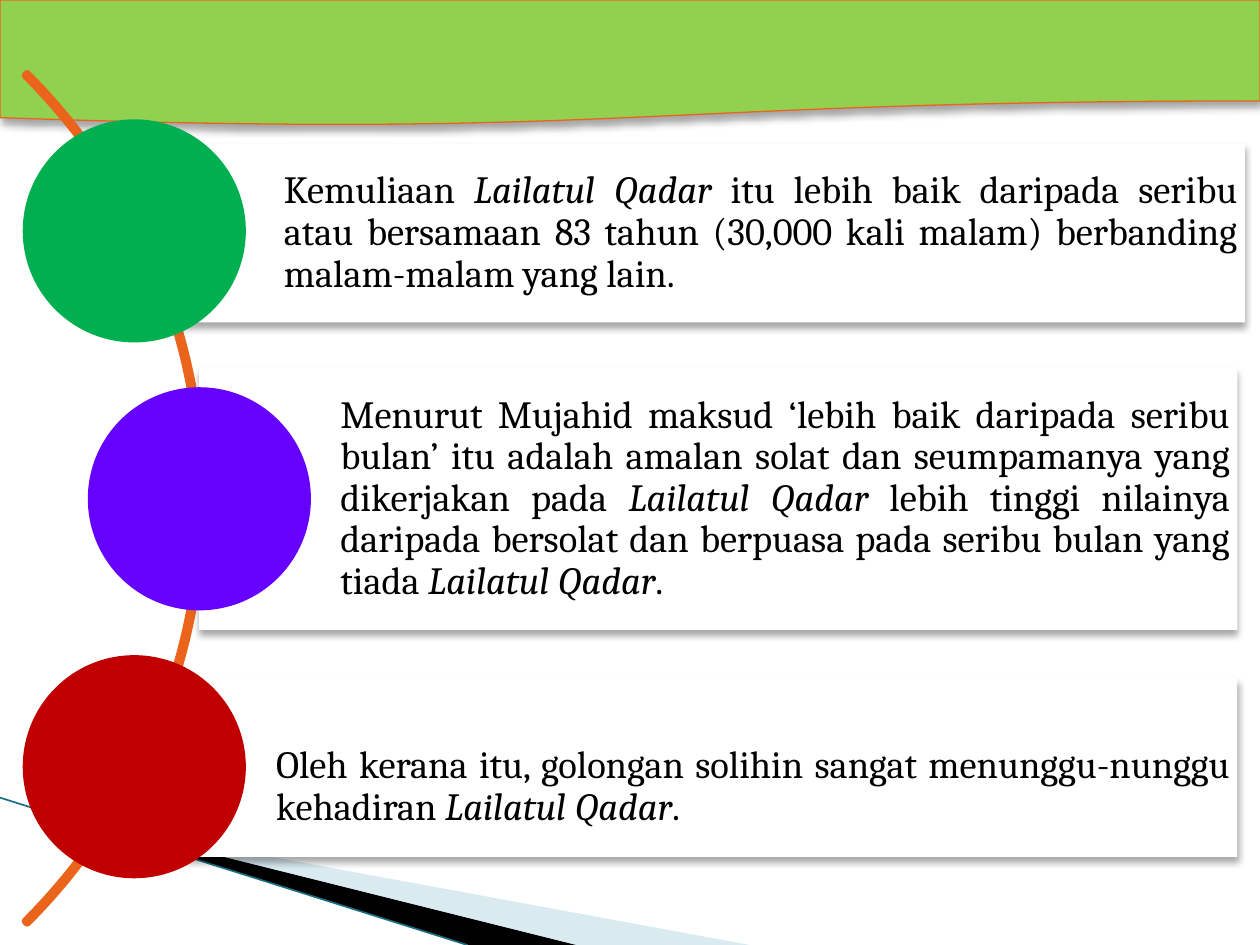
from lxml import etree
from pptx import Presentation
from pptx import util as u
from pptx.dml.color import RGBColor
from pptx.enum import shapes, text
from pptx.oxml import ns

Pt = u.Pt
WHITE, BLACK = RGBColor(255, 255, 255), RGBColor(0, 0, 0)
LIME, ORANGE = RGBColor(0x92, 0xD0, 0x50), RGBColor(0xEB, 0x64, 0x1B)
GREEN, VIOLET, RED = (RGBColor(0, 0xB0, 0x50), RGBColor(0x66, 0, 0xFF),
                      RGBColor(0xC0, 0, 0))
PALE_BLUE, TEAL = RGBColor(0xD9, 0xEA, 0xF1), RGBColor(0x1B, 0x6F, 0x82)

# Content: runs alternate between upright and italic
NIGHT = "Lailatul Qadar"
POINTS = [
    dict(box=(81.4, 82.1, 630, 102.2), dot=(13, GREEN), anchor="MIDDLE", top=4.3,
         runs=["Kemuliaan ", NIGHT + " ",
               "itu lebih baik daripada seribu atau bersamaan 83 tahun "
               "(30,000 kali malam) berbanding malam-malam yang lain."]),
    dict(box=(113.8, 210.2, 593.3, 149.8), dot=(50.2, VIOLET), anchor="MIDDLE", top=4.3,
         runs=["Menurut Mujahid maksud ‘lebih baik daripada seribu bulan’ itu "
               "adalah amalan solat dan seumpamanya yang dikerjakan pada ",
               NIGHT + " ",
               "lebih tinggi nilainya daripada bersolat dan berpuasa pada "
               "seribu bulan yang tiada ", NIGHT, "."]),
    dict(box=(77, 387.4, 630, 102.2), dot=(13, RED), anchor="TOP", top=38.5,
         runs=["Oleh kerana itu, golongan solihin sangat menunggu-nunggu "
               "kehadiran ", NIGHT, "."]),
]
WEDGES = [
    (PALE_BLUE, [(39.6, 468.4), (428.4, 540), (328.3, 540), (39.6, 468)]),
    (BLACK, [(38.2, 467.3), (329, 540), (267.8, 540), (38.9, 468)]),
]
DOT, DOT_TOP, DOT_STEP = 127.5, 68.2, 153.1

prs = Presentation()
prs.slide_width, prs.slide_height = Pt(720), Pt(540)
s = prs.slides.add_slide(prs.slide_layouts[6])


def style(sp, fill, line=None, width=0.75):
    sp.shadow.inherit = False
    sp.fill.solid()
    sp.fill.fore_color.rgb = fill
    if line is None:
        sp.line.fill.background()
    else:
        sp.line.color.rgb = line
        sp.line.width = Pt(width)
    return sp


def add_shape(kind, box, fill, **line):
    return style(s.shapes.add_shape(kind, *map(Pt, box)), fill, **line)


def drop_shadow(sp):
    effects = sp._element.spPr.find(ns.qn("a:effectLst"))
    shadow = etree.SubElement(effects, ns.qn("a:outerShdw"), blurRad=str(Pt(4)),
                              dist=str(Pt(3)), dir="5400000", rotWithShape="0")
    color = etree.SubElement(shadow, ns.qn("a:srgbClr"), val="000000")
    etree.SubElement(color, ns.qn("a:alpha"), val="35000")


def write(sp, runs, anchor="MIDDLE", top=4.3, size=22, font="Cambria", color=BLACK):
    tf = sp.text_frame
    tf.word_wrap = True
    tf.vertical_anchor = text.MSO_ANCHOR[anchor]
    tf.margin_left, tf.margin_top = Pt(80.8), Pt(top)
    tf.margin_right = tf.margin_bottom = Pt(4.3)
    p = tf.paragraphs[0]
    p.alignment = text.PP_ALIGN.JUSTIFY
    p.line_spacing = 0.9
    for i, words in enumerate(runs):
        r = p.add_run()
        r.text = words
        r.font.size, r.font.name = Pt(size), font
        r.font.color.rgb = color
        r.font.italic = i % 2 == 1


# Wedges and thin line in the bottom corner
for color, (start, *rest) in WEDGES:
    fb = s.shapes.build_freeform(Pt(start[0]), Pt(start[1]))
    fb.add_line_segments([(Pt(x), Pt(y)) for x, y in rest], close=True)
    style(fb.convert_to_shape(), color)
edge = s.shapes.add_connector(shapes.MSO_CONNECTOR.STRAIGHT,
                              Pt(0), Pt(455.8), Pt(267), Pt(540))
edge.line.color.rgb = TEAL
edge.line.width = Pt(0.95)
etree.SubElement(edge._element.spPr, ns.qn("a:effectLst"))

# Banner
Shape = shapes.MSO_SHAPE
drop_shadow(add_shape(Shape.FLOWCHART_DOCUMENT, (0, 0, 720, 72), LIME, line=ORANGE))

# Arc that links the points
arc = add_shape(Shape.BLOCK_ARC, (-570.2, -58.3, 686.2, 686.2), ORANGE,
                line=ORANGE, width=4.33)
for i, value in enumerate((189, 27, 0.002)):
    arc.adjustments[i] = value

# Text panels, each with its dot
for i, point in enumerate(POINTS):
    panel = add_shape(Shape.RECTANGLE, point["box"], WHITE)
    drop_shadow(panel)
    write(panel, point["runs"], anchor=point["anchor"], top=point["top"])
    left, color = point["dot"]
    add_shape(Shape.OVAL, (left, DOT_TOP + i * DOT_STEP, DOT, DOT), color)

prs.save("out.pptx")
